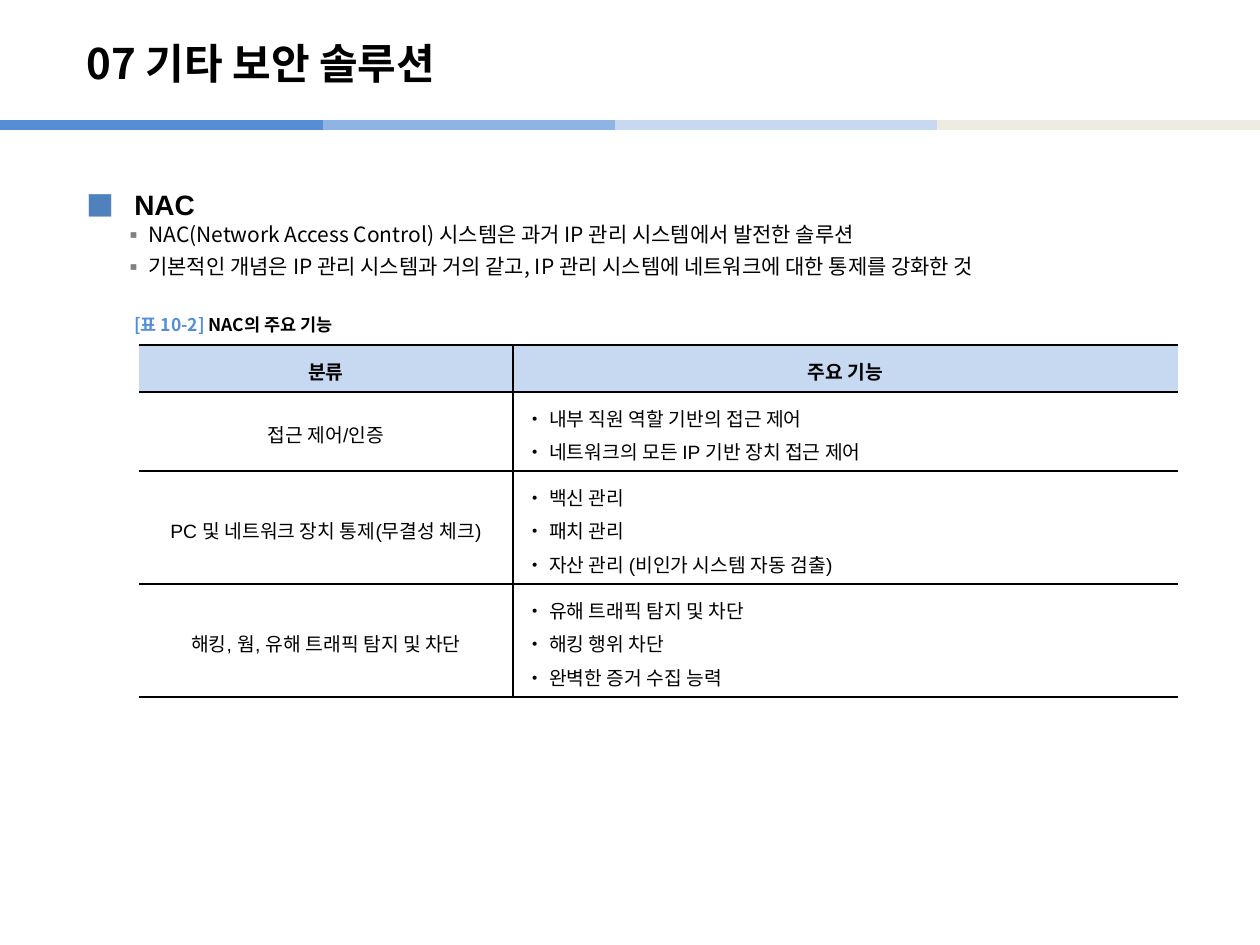
from dataclasses import dataclass

from lxml import etree
from pptx import Presentation
from pptx import util as u
from pptx.dml.color import RGBColor
from pptx.enum import shapes, text
from pptx.oxml import ns

BLACK = RGBColor(0x00, 0x00, 0x00)
WHITE = RGBColor(0xFF, 0xFF, 0xFF)
BLUE = RGBColor(0x55, 0x8E, 0xD5)
MID_BLUE = RGBColor(0x8E, 0xB4, 0xE3)
PALE_BLUE = RGBColor(0xC6, 0xD9, 0xF1)
CREAM = RGBColor(0xEE, 0xEC, 0xE1)
BULLET_BLUE = RGBColor(0x4F, 0x81, 0xBD)
BULLET_GREY = RGBColor(0x80, 0x80, 0x80)
NOTO = "Noto Sans CJK KR"
ARIAL = "Arial"


@dataclass(frozen=True)
class Band:
    left: int
    color: RGBColor


@dataclass(frozen=True)
class Point:
    words: str
    mark: str
    mark_color: RGBColor
    margin: int
    hanging: int
    font: dict
    spacing: dict


@dataclass(frozen=True)
class Feature:
    category: str
    functions: tuple[str, ...]
    height: int


def px(n: int) -> u.Emu:
    return u.Emu(round(n * 914400 / 126))


def style(target, values: dict) -> None:
    for name, value in values.items():
        setattr(target, name, value)


def add_run(paragraph, words: str, color: RGBColor, font: dict) -> None:
    run = paragraph.add_run()
    run.text = words
    style(run.font, font)
    run.font.color.rgb = color
    east_asian = etree.SubElement(run.font._element, ns.qn("a:ea"))
    east_asian.set("typeface", NOTO)


def place(shape, left: int, top: int, width: int, height: int) -> None:
    style(shape, {"left": px(left), "top": px(top),
                  "width": px(width), "height": px(height)})


def draw_band(slide, band: Band) -> None:
    line = slide.shapes.add_connector(
        shapes.MSO_CONNECTOR.STRAIGHT,
        px(band.left), px(125), px(band.left + 323), px(125))
    line.line.color.rgb = band.color
    line.line.width = u.Pt(6)
    etree.SubElement(line._element.spPr, ns.qn("a:effectLst"))


def write_point(paragraph, point: Point) -> None:
    properties = paragraph._p.get_or_add_pPr()
    properties.set("marL", str(px(point.margin)))
    properties.set("indent", str(-px(point.hanging)))
    style(paragraph, point.spacing)
    color = etree.SubElement(properties, ns.qn("a:buClr"))
    etree.SubElement(color, ns.qn("a:srgbClr")).set("val", str(point.mark_color))
    etree.SubElement(properties, ns.qn("a:buFont")).set("typeface", NOTO)
    etree.SubElement(properties, ns.qn("a:buChar")).set("char", point.mark)
    add_run(paragraph, point.words, BLACK, point.font)


def set_borders(cell, widths: dict[str, float]) -> None:
    properties = cell._tc.get_or_add_tcPr()
    for index, (edge, width) in enumerate(widths.items()):
        border = etree.Element(ns.qn(f"a:{edge}"))
        properties.insert(index, border)
        if width:
            border.set("w", str(u.Pt(width)))
            fill = etree.SubElement(border, ns.qn("a:solidFill"))
            etree.SubElement(fill, ns.qn("a:srgbClr")).set("val", str(BLACK))
        else:
            etree.SubElement(border, ns.qn("a:noFill"))


def write_cell(cell, lines: tuple[str, ...], centred: bool, header: bool) -> None:
    cell.fill.solid()
    cell.fill.fore_color.rgb = PALE_BLUE if header else WHITE
    cell.vertical_anchor = text.MSO_ANCHOR.TOP if header else text.MSO_ANCHOR.MIDDLE
    for index, words in enumerate(lines):
        frame = cell.text_frame
        paragraph = frame.add_paragraph() if index else frame.paragraphs[0]
        paragraph.line_spacing = 1.2
        paragraph.alignment = text.PP_ALIGN.CENTER if centred else text.PP_ALIGN.LEFT
        add_run(paragraph, words, BLACK,
                {"size": u.Pt(11), "bold": header, "name": ARIAL})


def draw_table(slide, features: list[Feature]) -> None:
    table = slide.shapes.add_table(
        len(features), 2, px(139), px(345), px(1039),
        px(sum(feature.height for feature in features))).table
    style(table, {"first_row": False, "horz_banding": False})
    for column, width in zip(table.columns, (374, 665)):
        column.width = px(width)
    for index, feature in enumerate(features):
        header = index == 0
        table.rows[index].height = px(feature.height)
        category, functions = table.rows[index].cells
        write_cell(category, (feature.category,), True, header)
        write_cell(functions, feature.functions, header, header)
        top = 1.5 if index == 1 else 1
        bottom = 1.5 if header else 1
        set_borders(category, {"lnL": 0, "lnR": 1, "lnT": top, "lnB": bottom})
        set_borders(functions, {"lnL": 1, "lnR": 0, "lnT": top, "lnB": bottom})


def main() -> None:
    deck = Presentation()
    style(deck, {"slide_width": px(1260), "slide_height": px(945)})
    slide = deck.slides.add_slide(deck.slide_layouts[5])

    for band in (Band(292, MID_BLUE), Band(615, PALE_BLUE),
                 Band(937, CREAM), Band(0, BLUE)):
        draw_band(slide, band)

    title = slide.shapes.title
    place(title, 74, 25, 1042, 76)
    style(title.text_frame, {"vertical_anchor": text.MSO_ANCHOR.MIDDLE,
                             "auto_size": text.MSO_AUTO_SIZE.NONE})
    heading = title.text_frame.paragraphs[0]
    heading.alignment = text.PP_ALIGN.LEFT
    add_run(heading, "07 기타 보안 솔루션", BLACK,
            {"size": u.Pt(24), "bold": True, "name": NOTO})

    detail = {"mark": "▪", "mark_color": BULLET_GREY, "margin": 62, "hanging": 25,
              "font": {"size": u.Pt(12), "bold": False, "name": NOTO},
              "spacing": {"space_after": u.Pt(4)}}
    points = [
        Point("NAC", "■", BULLET_BLUE, 48, 48,
              {"size": u.Pt(16), "bold": True, "name": ARIAL},
              {"line_spacing": 1.5}),
        Point("NAC(Network Access Control) 시스템은 과거 IP 관리 시스템에서 발전한 솔루션",
              **detail),
        Point("기본적인 개념은 IP 관리 시스템과 거의 같고, IP 관리 시스템에 네트워크에 대한 통제를 강화한 것",
              **detail),
    ]
    body = slide.shapes.add_textbox(px(74), px(165), px(1131), px(745)).text_frame
    body.word_wrap = True
    for index, point in enumerate(points):
        write_point(body.add_paragraph() if index else body.paragraphs[0], point)

    draw_table(slide, [
        Feature("분류", ("주요 기능",), 47),
        Feature("접근 제어/인증",
                ("• 내부 직원 역할 기반의 접근 제어",
                 "• 네트워크의 모든 IP 기반 장치 접근 제어"), 79),
        Feature("PC 및 네트워크 장치 통제(무결성 체크)",
                ("• 백신 관리", "• 패치 관리",
                 "• 자산 관리 (비인가 시스템 자동 검출)"), 113),
        Feature("해킹, 웜, 유해 트래픽 탐지 및 차단",
                ("• 유해 트래픽 탐지 및 차단", "• 해킹 행위 차단",
                 "• 완벽한 증거 수집 능력"), 113),
    ])

    caption = slide.shapes.add_textbox(px(122), px(305), px(263), px(39)).text_frame
    style(caption, {"word_wrap": False, "vertical_anchor": text.MSO_ANCHOR.MIDDLE})
    for words, color in (("[표 10-2] ", BLUE), ("NAC의 주요 기능", BLACK)):
        add_run(caption.paragraphs[0], words, color,
                {"size": u.Pt(10), "bold": True, "name": NOTO})

    deck.save("out.pptx")


if __name__ == "__main__":
    main()
